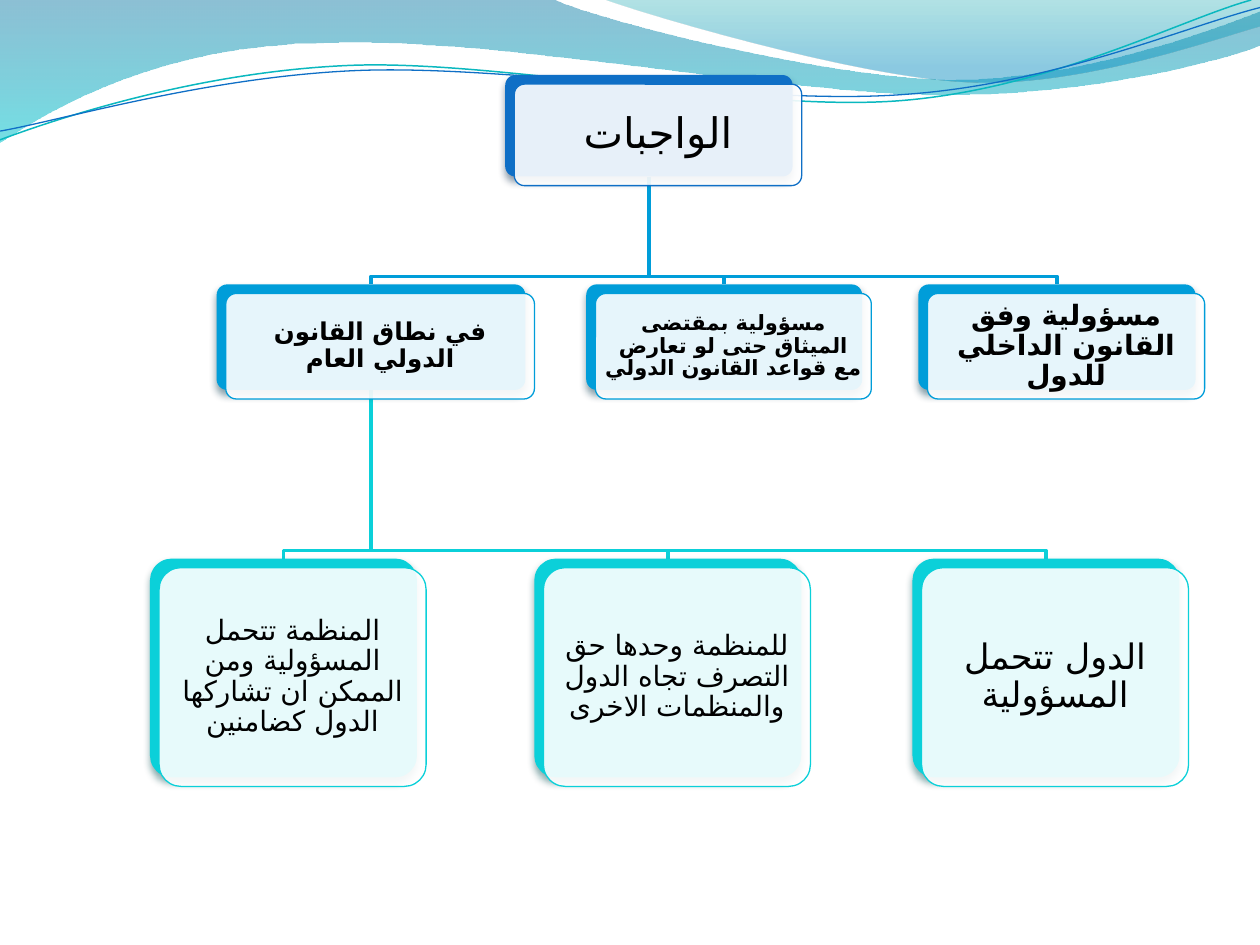
"""Build a slide with a three-level chart of duties under a wave header."""
from lxml.etree import Element, SubElement
from pptx import Presentation
from pptx.dml.color import RGBColor
from pptx.enum.shapes import MSO_SHAPE as Shape
from pptx.enum.text import MSO_ANCHOR as Anchor, PP_ALIGN as Align
from pptx.oxml.ns import qn
from pptx.util import Pt

FONT = "TeX Gyre Pagella"
ARABIC_FONT = "DejaVu Sans"
BLACK = RGBColor(0x00, 0x00, 0x00)
WHITE = RGBColor(0xFF, 0xFF, 0xFF)
BLUE = RGBColor(0x0F, 0x6F, 0xC6)
SKY = RGBColor(0x00, 0x9D, 0xD9)
CYAN = RGBColor(0x0B, 0xD0, 0xD9)
BLUE_SHADOW = RGBColor(0x04, 0x27, 0x47)
SKY_SHADOW = RGBColor(0x00, 0x37, 0x4C)
CYAN_SHADOW = RGBColor(0x02, 0x4B, 0x4E)
TEAL_LINE = RGBColor(0x0A, 0xB8, 0xBF)
DEEP_BLUE = RGBColor(0x00, 0x74, 0xA1)
AQUA = RGBColor(0x00, 0xC6, 0xCF)
TEAL = RGBColor(0x00, 0xA1, 0xA9)
AZURE = RGBColor(0x00, 0x8B, 0xBF)

CARD_OFFSET = 5.2
BEND_GAP = 4.6
CORNER = 0.1

presentation = Presentation()
presentation.slide_width = Pt(720)
presentation.slide_height = Pt(540)
slide = presentation.slides.add_slide(presentation.slide_layouts[6])


def add_path(path, closed=False, line=None, width=0):
    """Draw an outline from points (x, y) and cubic curves (x1, y1, x2, y2, x, y)."""
    points = [(Pt(segment[-2]), Pt(segment[-1])) for segment in path]
    builder = slide.shapes.build_freeform(*points[0], scale=1.0)
    builder.add_line_segments(points[1:], close=closed)
    shape = builder.convert_to_shape()
    steps = list(shape._element.spPr.iter(qn("a:lnTo")))
    for segment, step in zip(path[1:], steps):
        if len(segment) == 6:
            step.tag = qn("a:cubicBezTo")
            for index in (0, 1):
                control = Element(qn("a:pt"))
                control.set("x", str(Pt(segment[2 * index]) - shape.left))
                control.set("y", str(Pt(segment[2 * index + 1]) - shape.top))
                step.insert(index, control)
    shape.shadow.inherit = False
    if line is None:
        shape.line.fill.background()
    else:
        shape.fill.background()
        shape.line.color.rgb = line
        shape.line.width = Pt(width)
    return shape


def set_alpha(color_element, percent):
    """Give a colour element an opacity in percent."""
    SubElement(color_element, qn("a:alpha")).set("val", str(percent * 1000))


WAVE_AREAS = [
    ([(0, 0), (316.8, 0), (342.7, 12.2, 478.1, 45.4, 545.8, 45.4),
      (614.2, 45.4, 689.8, 18.7, 720, 6.5), (720, 25.9),
      (707.8, 31.7, 626.4, 54.7, 537.1, 54), (447.8, 54, 275, 20.2, 185, 24.5),
      (92.9, 25.9, 33.1, 59.8, 0, 81.2)],
     [(0, DEEP_BLUE, 45), (1, AQUA, 55)]),
    ([(345.5, 0), (366.5, 7.9, 491, 44.6, 553.7, 46.8),
      (616.3, 49.7, 691.9, 23, 720, 15.1), (720, 0)],
     [(0, TEAL, 30), (0.8, AZURE, 45)]),
]
for path, stops in WAVE_AREAS:
    area = add_path(path, closed=True)
    area.fill.gradient()
    area.fill.gradient_angle = 270
    for gradient_stop, (position, color, alpha) in zip(area.fill.gradient_stops, stops):
        gradient_stop.position = position
        gradient_stop.color.rgb = color
    for element, (position, color, alpha) in zip(
            list(area._element.spPr.iter(qn("a:srgbClr"))), stops):
        set_alpha(element, alpha)

add_path([(0, 79.9), (34.6, 67, 113.8, 41, 199.4, 37.4),
          (284.4, 33.8, 427, 64.1, 513.4, 57.6),
          (599.8, 51.1, 675.4, 10.8, 715, 0)], line=TEAL_LINE, width=0.85)
add_path([(0, 74.9), (33.8, 69.1, 118.1, 43.9, 203.8, 40.3),
          (290.2, 36.7, 429.8, 60.5, 516.2, 54),
          (601.9, 48.2, 677.5, 15.1, 720, 4.3)], line=BLUE, width=0.75)

LEVELS = [
    (BLUE, BLUE_SHADOW, 42.9, 58, False, None, [
        (288.7, 164.2, 24, "الواجبات")]),
    (SKY, SKY_SHADOW, 162.5, 60.3, True, (370.8, 100.9), [
        (123.8, 176.4, 14, "في نطاق القانون الدولي العام"),
        (335, 157.7, 12, "مسؤولية بمقتضى الميثاق حتى لو تعارض مع قواعد القانون الدولي"),
        (524.8, 158.4, 16, "مسؤولية وفق القانون الداخلي للدول")]),
    (CYAN, CYAN_SHADOW, 319.2, 125, False, (212, 222.8), [
        (85.7, 152.6, 16, "المنظمة تتحمل المسؤولية ومن الممكن ان تشاركها الدول كضامنين"),
        (305.3, 152.6, 16, "للمنظمة وحدها حق التصرف تجاه الدول والمنظمات الاخرى"),
        (521.4, 152.6, 20, "الدول تتحمل المسؤولية")]),
]

for color, shadow_color, top, height, bold, parent, cards in LEVELS[1:]:
    bend = top - BEND_GAP
    for left, width, size, text in cards:
        center = left + width / 2
        add_path([parent, (parent[0], bend), (center, bend), (center, top)],
                 line=color, width=2)

for color, shadow_color, top, height, bold, parent, cards in LEVELS:
    inset = 0.29 * CORNER * height
    for left, width, size, text in cards:
        back, card = [
            slide.shapes.add_shape(Shape.ROUNDED_RECTANGLE, Pt(left + offset),
                                   Pt(top + offset), Pt(width), Pt(height))
            for offset in (0, CARD_OFFSET)]
        for shape, fill_color in ((back, color), (card, WHITE)):
            shape.adjustments[0] = CORNER
            shape.shadow.inherit = False
            shape.fill.solid()
            shape.fill.fore_color.rgb = fill_color
        back.line.fill.background()
        shadow = SubElement(back._element.spPr.find(qn("a:effectLst")), qn("a:outerShdw"))
        for name, value in (("blurRad", Pt(4.5)), ("dist", Pt(3)), ("dir", 5400000)):
            shadow.set(name, str(int(value)))
        shadow.set("rotWithShape", "0")
        shadow_fill = SubElement(shadow, qn("a:srgbClr"))
        shadow_fill.set("val", str(shadow_color))
        set_alpha(shadow_fill, 48)

        set_alpha(card._element.spPr.find(qn("a:solidFill"))[0], 90)
        card.line.color.rgb = color
        card.line.width = Pt(0.75)

        label = slide.shapes.add_textbox(
            Pt(left + CARD_OFFSET + inset), Pt(top + CARD_OFFSET + inset),
            Pt(width - 2 * inset), Pt(height - 2 * inset))
        frame = label.text_frame
        frame.word_wrap = True
        frame.vertical_anchor = Anchor.MIDDLE
        frame.margin_left = frame.margin_right = Pt(size * 0.3)
        frame.margin_top = frame.margin_bottom = Pt(size * 0.3)
        paragraph = frame.paragraphs[0]
        paragraph.text = text
        paragraph.alignment = Align.CENTER
        paragraph.line_spacing = 0.9
        paragraph.font.size = Pt(size)
        paragraph.font.bold = bold
        paragraph.font.color.rgb = BLACK
        paragraph.font.name = FONT
        properties = paragraph._p.pPr
        properties.set("rtl", "1")
        SubElement(properties.find(qn("a:defRPr")), qn("a:cs")).set("typeface", ARABIC_FONT)

presentation.save("out.pptx")
